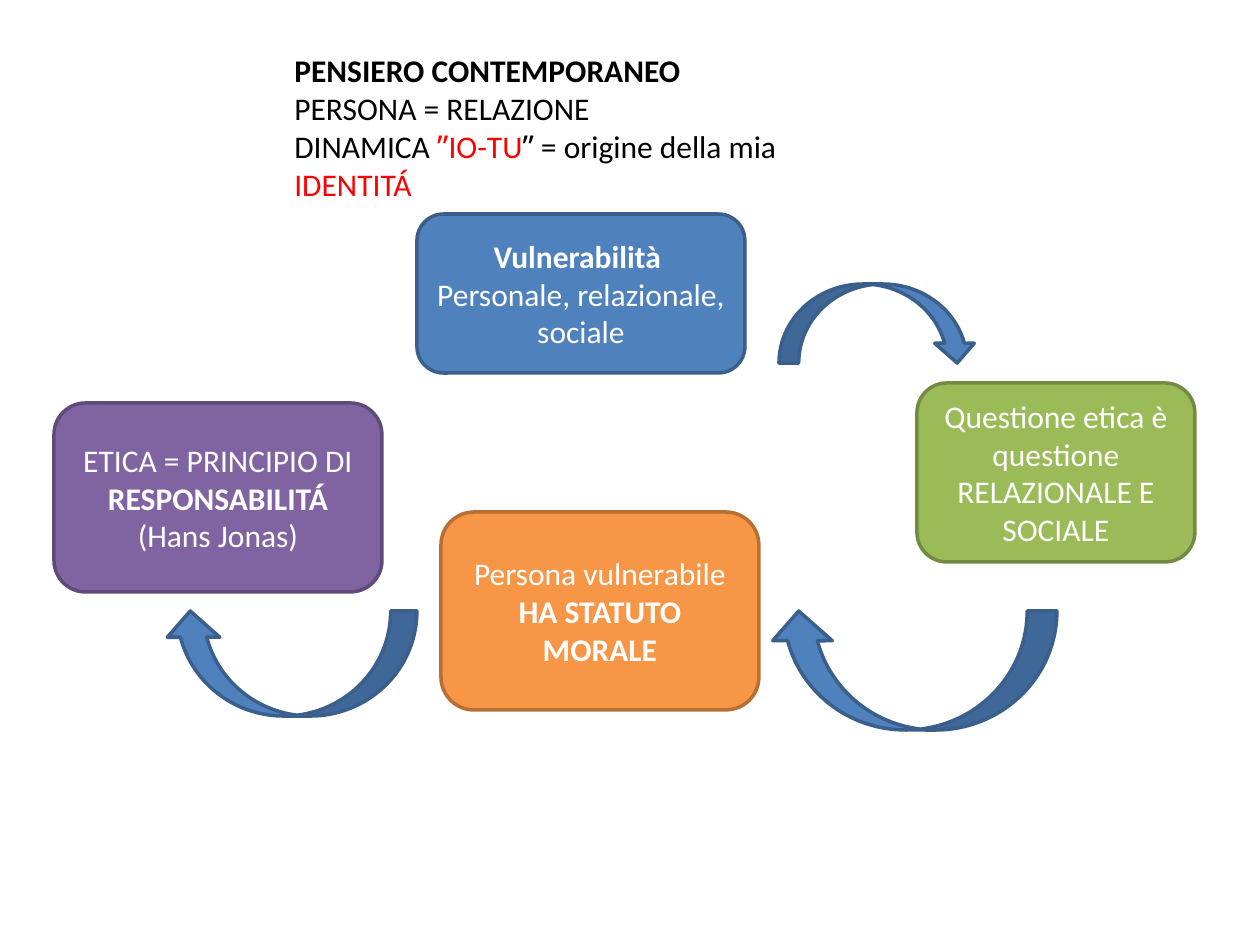
import pptx
import pptx.util
import pptx.dml.color
import pptx.enum.shapes
import pptx.enum.text

PX = 914400 // 126
SHAPES = pptx.enum.shapes.MSO_SHAPE
COLORS = {
    "black": "000000", "white": "FFFFFF", "red": "FF0000",
    "blue": "4F81BD", "blue_edge": "3A5F8C",
    "green": "9BBB59", "green_edge": "738A42",
    "orange": "F79646", "orange_edge": "B76F34",
    "purple": "8064A2", "purple_edge": "5F4A78",
}


def rgb(name):
    return pptx.dml.color.RGBColor.from_string(COLORS[name])


class Board:
    def __init__(self, slide, font="Calibri", size=18, line=2):
        self.slide = slide
        self.font = font
        self.size = pptx.util.Pt(size)
        self.line = pptx.util.Pt(line)

    def fill_text(self, frame, paragraphs, color, align):
        frame.word_wrap = True
        for i, runs in enumerate(paragraphs):
            paragraph = frame.paragraphs[0] if i == 0 else frame.add_paragraph()
            paragraph.alignment = align
            paragraph.font.name = self.font
            paragraph.font.size = self.size
            paragraph.font.color.rgb = rgb(color)
            for text, *marks in runs:
                run = paragraph.add_run()
                run.text = text
                run.font.name = self.font
                run.font.size = self.size
                run.font.bold = "bold" in marks
                run.font.color.rgb = rgb("red" if "red" in marks else color)

    def heading(self, box, paragraphs):
        frame = self.slide.shapes.add_textbox(*(v * PX for v in box)).text_frame
        self.fill_text(frame, paragraphs, "black", pptx.enum.text.PP_ALIGN.LEFT)

    def shape(self, kind, box, color):
        shape = self.slide.shapes.add_shape(kind, *(v * PX for v in box))
        shape.shadow.inherit = False
        shape.fill.solid()
        shape.fill.fore_color.rgb = rgb(color)
        shape.line.color.rgb = rgb(color + "_edge")
        shape.line.width = self.line
        return shape

    def card(self, box, color, paragraphs):
        frame = self.shape(SHAPES.ROUNDED_RECTANGLE, box, color).text_frame
        frame.vertical_anchor = pptx.enum.text.MSO_ANCHOR.MIDDLE
        self.fill_text(frame, paragraphs, "white", pptx.enum.text.PP_ALIGN.CENTER)

    def arrow(self, kind, box, flip=False):
        arrow = self.shape(kind, box, "blue")
        if flip:
            arrow._element.spPr.xfrm.set("flipH", "1")


def main():
    deck = pptx.Presentation()
    deck.slide_width = 1260 * PX
    deck.slide_height = 945 * PX
    board = Board(deck.slides.add_slide(deck.slide_layouts[6]))

    board.heading((282, 45, 595, 204), [
        [("PENSIERO CONTEMPORANEO", "bold")],
        [("PERSONA = RELAZIONE",)],
        [("DINAMICA ",), ("ʺIO-TU", "red"), ("ʺ = origine della mia ",),
         ("IDENTITÁ", "red")],
    ])
    board.card((417, 214, 328, 159), "blue", [
        [("Vulnerabilità ", "bold")],
        [("Personale, relazionale, sociale",)],
    ])
    board.arrow(SHAPES.CURVED_DOWN_ARROW, (779, 284, 198, 79))
    board.card((917, 383, 278, 179), "green", [
        [("Questione etica è questione RELAZIONALE E SOCIALE",)],
    ])
    board.arrow(SHAPES.CURVED_UP_ARROW, (769, 611, 288, 119), flip=True)
    board.card((441, 512, 318, 198), "orange", [
        [("Persona vulnerabile ",), ("HA STATUTO MORALE", "bold")],
    ])
    board.arrow(SHAPES.CURVED_UP_ARROW, (164, 611, 253, 105), flip=True)
    board.card((54, 403, 328, 189), "purple", [
        [("ETICA = PRINCIPIO DI ",), ("RESPONSABILITÁ", "bold"),
         (" (Hans Jonas)",)],
    ])
    deck.save("out.pptx")


if __name__ == "__main__":
    main()
